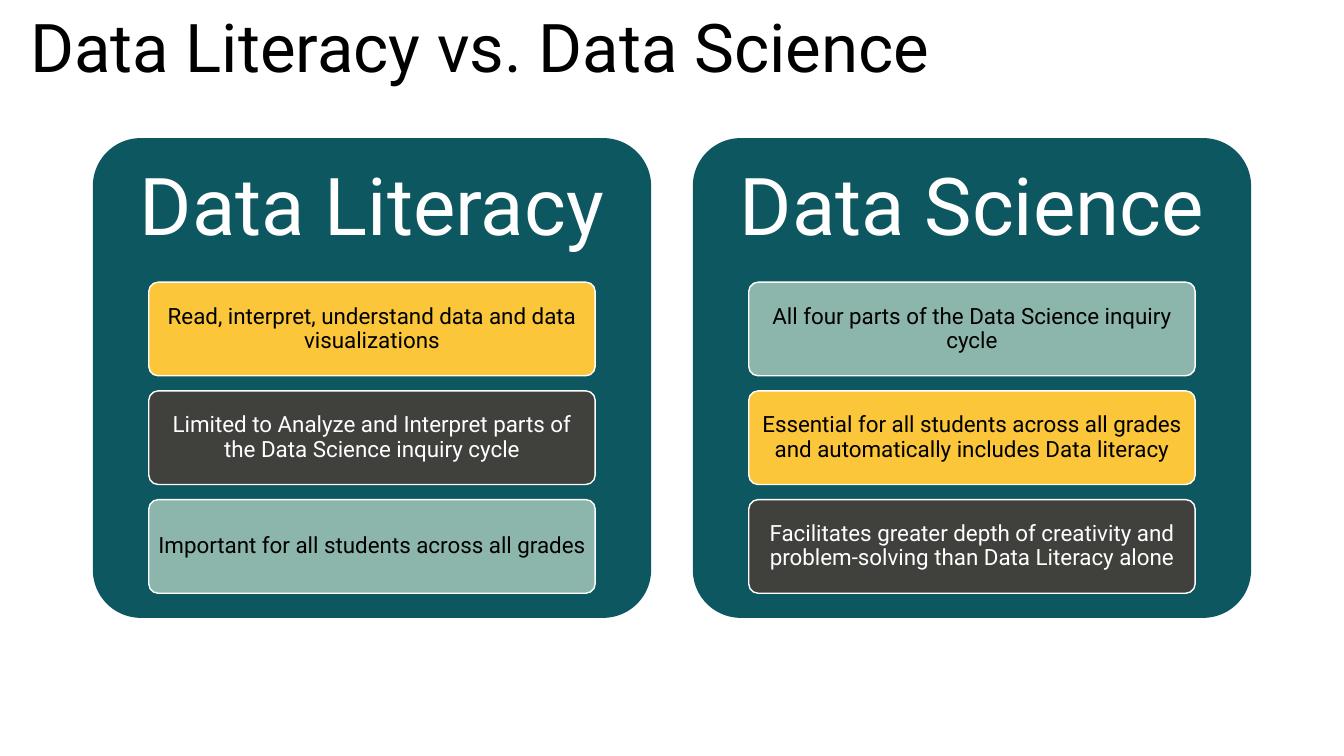
"""Build a slide comparing data literacy with data science."""
from dataclasses import dataclass

from pptx import Presentation
from pptx.dml.color import RGBColor
from pptx.enum.shapes import MSO_SHAPE
from pptx.enum.text import MSO_ANCHOR, PP_ALIGN
from pptx.shapes.autoshape import Shape
from pptx.slide import Slide
from pptx.text.text import TextFrame
from pptx.util import Cm, Pt

FONT = "Roboto"
BLACK, WHITE = "000000", "FFFFFF"
TEAL, YELLOW, CHARCOAL, SAGE = "0D5761", "FBC639", "40403D", "8CB5AB"

PANEL_LEFT, PANEL_TOP, PANEL_PITCH = 2.34, 3.48, 15.12
PANEL_WIDTH, PANEL_HEIGHT, HEADING_HEIGHT = 14.07, 12.09, 3.63
CARD_WIDTH, CARD_HEIGHT, CARD_PITCH = 11.25, 2.36, 2.74


@dataclass
class Card:
    text: str
    fill: str
    text_color: str = BLACK


@dataclass
class Panel:
    heading: str
    cards: list[Card]


PANELS = [
    Panel("Data Literacy", [
        Card("Read, interpret, understand data and data visualizations", YELLOW),
        Card("Limited to Analyze and Interpret parts of the Data Science inquiry cycle", CHARCOAL, WHITE),
        Card("Important for all students across all grades", SAGE),
    ]),
    Panel("Data Science", [
        Card("All four parts of the Data Science inquiry cycle", SAGE),
        Card("Essential for all students across all grades and automatically includes Data literacy", YELLOW),
        Card("Facilitates greater depth of creativity and problem-solving than Data Literacy alone", CHARCOAL, WHITE),
    ]),
]


def color(value: str) -> RGBColor:
    return RGBColor.from_string(value)


def write(frame: TextFrame, text: str, size: int, text_color: str) -> None:
    frame.word_wrap = True
    run = frame.paragraphs[0].add_run()
    run.text = text
    run.font.name = FONT
    run.font.size = Pt(size)
    run.font.color.rgb = color(text_color)


def center(frame: TextFrame, side_inset: float, end_inset: float) -> None:
    frame.vertical_anchor = MSO_ANCHOR.MIDDLE
    frame.margin_left = frame.margin_right = Cm(side_inset)
    frame.margin_top = frame.margin_bottom = Cm(end_inset)
    paragraph = frame.paragraphs[0]
    paragraph.alignment = PP_ALIGN.CENTER
    paragraph.line_spacing = 0.9


def add_rounded(slide: Slide, left: float, top: float, width: float, height: float, fill: str) -> Shape:
    shape = slide.shapes.add_shape(
        MSO_SHAPE.ROUNDED_RECTANGLE, Cm(left), Cm(top), Cm(width), Cm(height))
    shape.adjustments[0] = 0.1
    shape.shadow.inherit = False
    shape.fill.solid()
    shape.fill.fore_color.rgb = color(fill)
    return shape


def add_card(slide: Slide, card: Card, left: float, top: float) -> None:
    shape = add_rounded(slide, left, top, CARD_WIDTH, CARD_HEIGHT, card.fill)
    shape.line.color.rgb = color(WHITE)
    shape.line.width = Pt(1)
    write(shape.text_frame, card.text, 16, card.text_color)
    center(shape.text_frame, 0.1, 0.08)


def add_panel(slide: Slide, panel: Panel, left: float) -> None:
    background = add_rounded(slide, left, PANEL_TOP, PANEL_WIDTH, PANEL_HEIGHT, TEAL)
    background.line.fill.background()
    heading = slide.shapes.add_textbox(
        Cm(left), Cm(PANEL_TOP), Cm(PANEL_WIDTH), Cm(HEADING_HEIGHT))
    write(heading.text_frame, panel.heading, 57, WHITE)
    center(heading.text_frame, 0.61, 0.61)
    card_left = left + (PANEL_WIDTH - CARD_WIDTH) / 2
    for row, card in enumerate(panel.cards):
        add_card(slide, card, card_left, PANEL_TOP + HEADING_HEIGHT + row * CARD_PITCH)


def main() -> None:
    presentation = Presentation()
    presentation.slide_width = Cm(33.87)
    presentation.slide_height = Cm(19.05)
    slide = presentation.slides.add_slide(presentation.slide_layouts[6])
    title = slide.shapes.add_textbox(Cm(0.51), Cm(0), Cm(30.3), Cm(2.31))
    write(title.text_frame, "Data Literacy vs. Data Science", 48, BLACK)
    for column, panel in enumerate(PANELS):
        add_panel(slide, panel, PANEL_LEFT + column * PANEL_PITCH)
    presentation.save("out.pptx")


if __name__ == "__main__":
    main()
